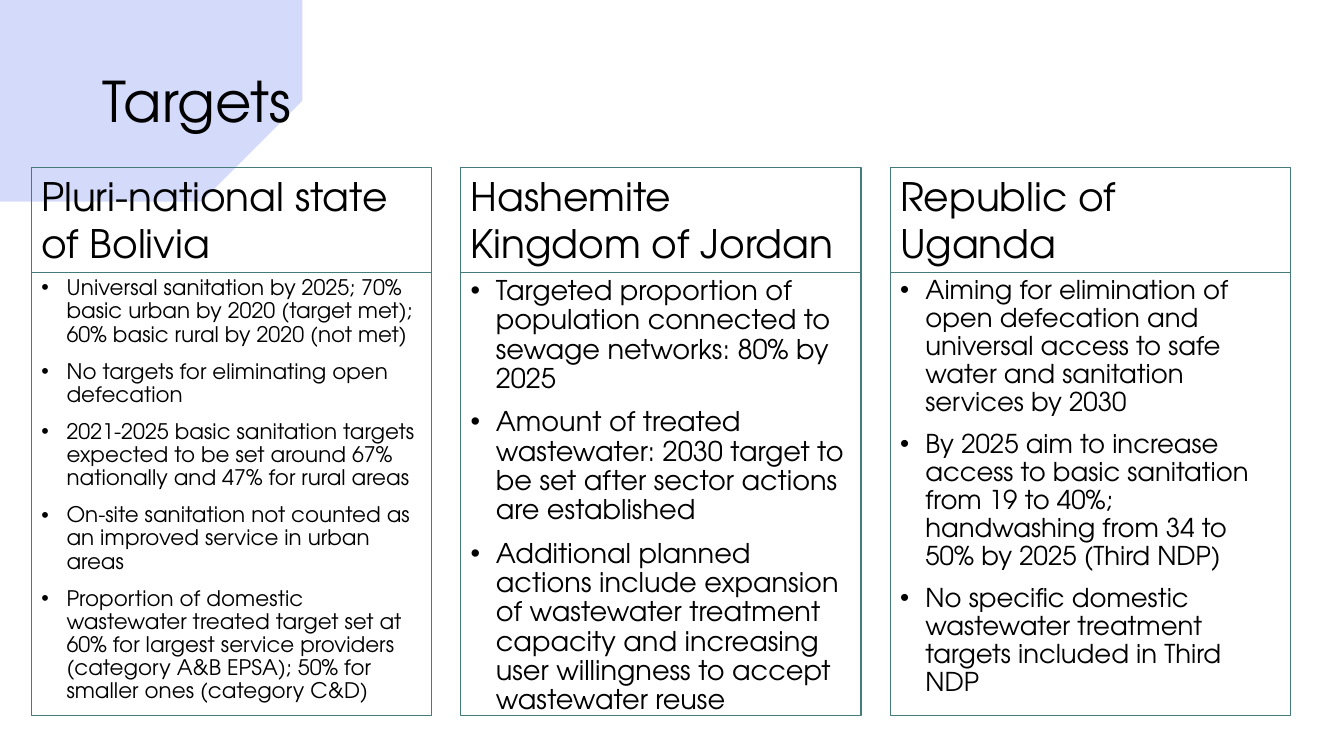
import pptx
import pptx.util
import pptx.dml.color
import pptx.enum.text
import pptx.oxml
import pptx.oxml.ns
from pptx.util import Inches, Pt

# Content: heading, list size in points, list items
TITLE = "Targets"
COUNTRIES = [
    ("Pluri-national state of Bolivia", 15.3, [
        "Universal sanitation by 2025; 70% basic urban by 2020 (target met); "
        "60% basic rural by 2020 (not met)",
        "No targets for eliminating open defecation",
        "2021-2025 basic sanitation targets expected to be set around 67% "
        "nationally and 47% for rural areas",
        "On-site sanitation not counted as an improved service in urban areas",
        "Proportion of domestic wastewater treated target set at 60% for largest "
        "service providers (category A&B EPSA); 50% for smaller ones (category C&D)",
    ]),
    ("Hashemite Kingdom of Jordan", 19.4, [
        "Targeted proportion of population connected to sewage networks: 80% by 2025",
        "Amount of treated wastewater: 2030 target to be set after sector actions "
        "are established",
        "Additional planned actions include expansion of wastewater treatment "
        "capacity and increasing user willingness to accept wastewater reuse",
    ]),
    ("Republic of Uganda", 18.5, [
        "Aiming for elimination of open defecation and universal access to safe "
        "water and sanitation services by 2030",
        "By 2025 aim to increase access to basic sanitation from 19 to 40%; "
        "handwashing from 34 to 50% by 2025 (Third NDP)",
        "No specific domestic wastewater treatment targets included in Third NDP",
    ]),
]

# Brush stroke outline in inches, clockwise from the top left
BRUSH = [
    (0, 0.34), (0.25, 0.37), (1.51, 0.38), (1.94, 0.41), (2.48, 0.41), (2.8, 0.47),
    (2.53, 0.57), (2.62, 0.62), (2.38, 0.66), (2.75, 0.74), (2.51, 0.75),
    (2.9, 0.85), (2.63, 0.88), (3.3, 0.94), (3.18, 1.06), (2.8, 1.2),
    (2.74, 1.28), (3.08, 1.28), (2.69, 1.38), (2.73, 1.42), (2.52, 1.48),
    (2.63, 1.48), (1.97, 1.72), (1.02, 1.88), (0.65, 1.91), (0, 1.88),
]

FONT = "TeX Gyre Adventor"
BLACK = pptx.dml.color.RGBColor(0x00, 0x00, 0x00)
TEAL = pptx.dml.color.RGBColor(0x45, 0x7C, 0x7A)
BRUSH_BLUE = pptx.dml.color.RGBColor(0x29, 0x4F, 0xE7)

# Grid in inches
LEFT, COLUMN, PITCH = 0.31, 3.97, 4.26
HEADING_TOP, HEADING_HEIGHT, LIST_HEIGHT = 1.66, 1.04, 4.4
INDENT = Inches(0.25)


def place(box, left, top, width, height):
    box.left, box.top = Inches(left), Inches(top)
    box.width, box.height = Inches(width), Inches(height)


def write(box, lines, size, anchor=pptx.enum.text.MSO_ANCHOR.TOP):
    frame = box.text_frame
    frame.word_wrap = True
    frame.auto_size = pptx.enum.text.MSO_AUTO_SIZE.NONE
    frame.vertical_anchor = anchor
    frame.text = "\n".join(lines)
    for paragraph in frame.paragraphs:
        paragraph.alignment = pptx.enum.text.PP_ALIGN.LEFT
        paragraph.font.name = FONT
        paragraph.font.size = Pt(size)
        paragraph.font.color.rgb = BLACK


def outline(box):
    box.line.color.rgb = TEAL
    box.line.width = Pt(0.75)


def add_bullets(box):
    for paragraph in box.text_frame.paragraphs:
        paragraph.line_spacing = 0.9
        paragraph.space_before = Pt(10)
        properties = paragraph._p.get_or_add_pPr()
        properties.set("marL", str(INDENT))
        properties.set("indent", str(-INDENT))
        for tag, key, value in (("a:buFont", "typeface", "Arial"), ("a:buChar", "char", "•")):
            mark = pptx.oxml.parse_xml(f"<{tag} {pptx.oxml.ns.nsdecls('a')}/>")
            mark.set(key, value)
            properties.insert_element_before(mark, "a:tabLst", "a:defRPr", "a:extLst")


def add_brush(slide):
    builder = slide.shapes.build_freeform(*BRUSH[0], scale=Inches(1))
    builder.add_line_segments(BRUSH[1:])
    brush = builder.convert_to_shape()
    brush.shadow.inherit = False
    brush.line.fill.background()
    brush.fill.solid()
    brush.fill.fore_color.rgb = BRUSH_BLUE
    color = brush._element.spPr.find(".//" + pptx.oxml.ns.qn("a:srgbClr"))
    color.append(pptx.oxml.parse_xml(f'<a:alpha {pptx.oxml.ns.nsdecls("a")} val="20000"/>'))
    slide.shapes._spTree.insert(2, brush._element)  # behind the text


def main():
    deck = pptx.Presentation()
    deck.slide_width, deck.slide_height = Inches(13.33), Inches(7.5)
    slide = deck.slides.add_slide(deck.slide_layouts[1])
    add_brush(slide)

    # Title
    title = slide.shapes.title
    place(title, 0.92, 0.31, 11.5, 1.45)
    write(title, [TITLE], 40, pptx.enum.text.MSO_ANCHOR.MIDDLE)
    title.text_frame.paragraphs[0].line_spacing = 0.9

    # One column per country: list below, heading above
    for column, (country, size, targets) in enumerate(COUNTRIES):
        left = LEFT + column * PITCH
        target_list = (slide.placeholders[1] if column == 0
                       else slide.shapes.add_textbox(0, 0, 0, 0))
        place(target_list, left, HEADING_TOP + HEADING_HEIGHT, COLUMN, LIST_HEIGHT)
        write(target_list, targets, size)
        add_bullets(target_list)
        outline(target_list)

        heading = slide.shapes.add_textbox(0, 0, 0, 0)
        place(heading, left, HEADING_TOP, COLUMN, HEADING_HEIGHT)
        write(heading, [country], 28)
        outline(heading)

    deck.save("out.pptx")


if __name__ == "__main__":
    main()
